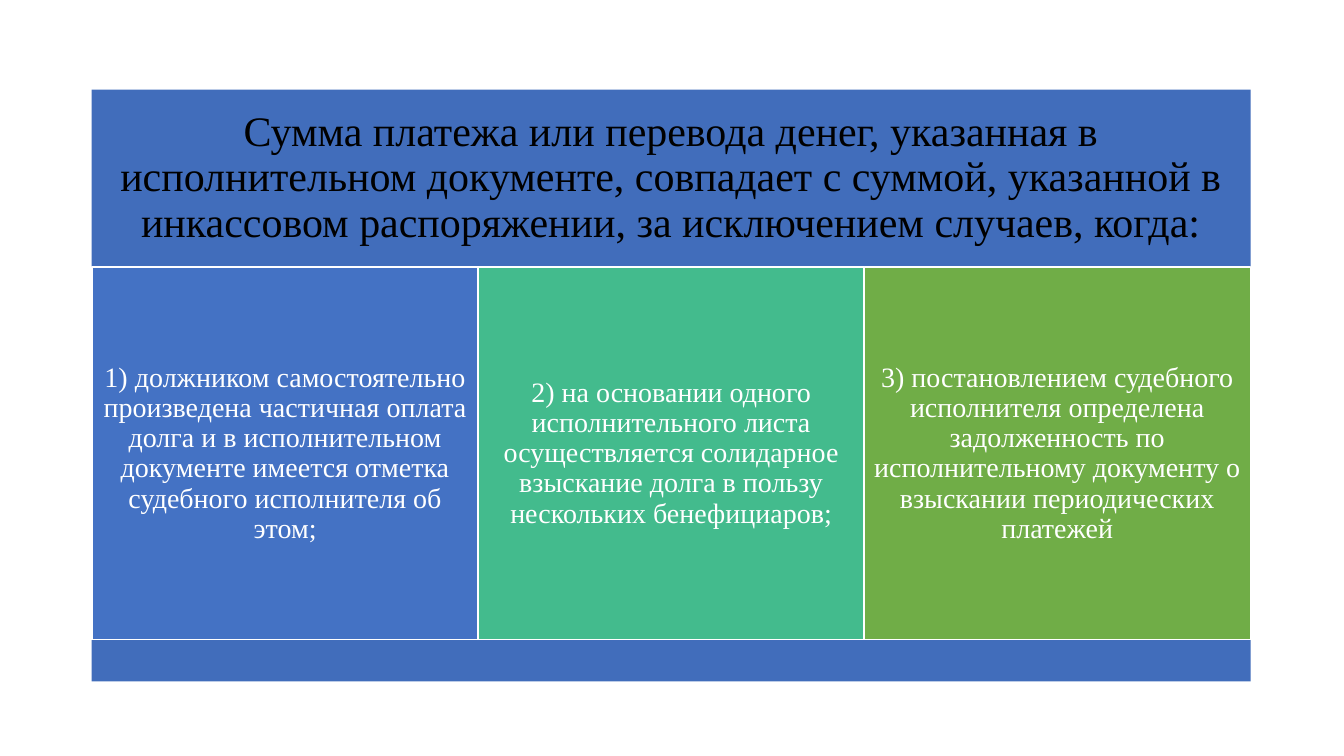
from pptx import Presentation
from pptx.dml.color import RGBColor
from pptx.enum.shapes import MSO_SHAPE
from pptx.enum.text import MSO_ANCHOR, MSO_AUTO_SIZE, PP_ALIGN
from pptx.util import Cm, Pt

RECT = MSO_SHAPE.RECTANGLE
MIDDLE = MSO_ANCHOR.MIDDLE
NO_FIT = MSO_AUTO_SIZE.NONE
CENTER = PP_ALIGN.CENTER

FONT = "Times New Roman"
WHITE, BLACK, BLUE = "FFFFFF", "000000", "416DBB"
LEFT, TOP, WIDTH = 2.31, 2.26, 29.21
HEAD_H, CASE_H, FOOT_H = 4.47, 9.4, 1.04
CASE_W = 9.73

HEAD = ("Сумма платежа или перевода денег, указанная в исполнительном документе, "
        "совпадает с суммой, указанной в инкассовом распоряжении, "
        "за исключением случаев, когда:")
CASES = [
    ("4472C4", "1) должником самостоятельно произведена частичная оплата долга "
               "и в исполнительном документе имеется отметка судебного исполнителя об этом;"),
    ("43BB8D", "2) на основании одного исполнительного листа осуществляется "
               "солидарное взыскание долга в пользу нескольких бенефициаров;"),
    ("70AD47", "3) постановлением судебного исполнителя определена задолженность "
               "по исполнительному документу о взыскании периодических платежей"),
]


def paint(fill, color):
    """Make a fill solid in a hex colour."""
    fill.solid()
    fill.fore_color.rgb = RGBColor.from_string(color)


def write(shape, text, size, color, inset):
    """Put centred text in a shape."""
    frame = shape.text_frame
    frame.text = text
    frame.word_wrap = True
    frame.auto_size = NO_FIT
    frame.vertical_anchor = MIDDLE
    frame.margin_left = frame.margin_right = Cm(inset)
    frame.margin_top = frame.margin_bottom = Cm(inset)
    para = frame.paragraphs[0]
    para.alignment = CENTER
    para.line_spacing = 0.9
    para.space_before = Pt(0)
    font = para.runs[0].font
    font.name = FONT
    font.size = Pt(size)
    font.color.rgb = RGBColor.from_string(color)


def add_box(slide, left, top, width, height, color):
    """Add a plain filled box without a line."""
    box = slide.shapes.add_shape(RECT, Cm(left), Cm(top), Cm(width), Cm(height))
    box.shadow.inherit = False
    paint(box.fill, color)
    box.line.fill.background()
    return box


def set_head(slide):
    """Turn the title into the top band."""
    title = slide.shapes.title
    title.left, title.top = Cm(LEFT), Cm(TOP)
    title.width, title.height = Cm(WIDTH), Cm(HEAD_H)
    paint(title.fill, BLUE)
    write(title, HEAD, 30, BLACK, 0.3)


def add_case(slide, index, color, text):
    """Add one column below the band."""
    left = LEFT + 0.01 + index * CASE_W
    box = add_box(slide, left, TOP + HEAD_H, CASE_W, CASE_H, color)
    paint(box.line.fill, WHITE)
    box.line.width = Pt(1)
    write(box, text, 20, WHITE, 0.2)


def main():
    """Build and save the slide."""
    deck = Presentation()
    deck.slide_width, deck.slide_height = Cm(33.87), Cm(19.05)
    slide = deck.slides.add_slide(deck.slide_layouts[5])
    set_head(slide)
    for index, (color, text) in enumerate(CASES):
        add_case(slide, index, color, text)
    add_box(slide, LEFT, TOP + HEAD_H + CASE_H, WIDTH, FOOT_H, BLUE)
    deck.save("out.pptx")


if __name__ == "__main__":
    main()
